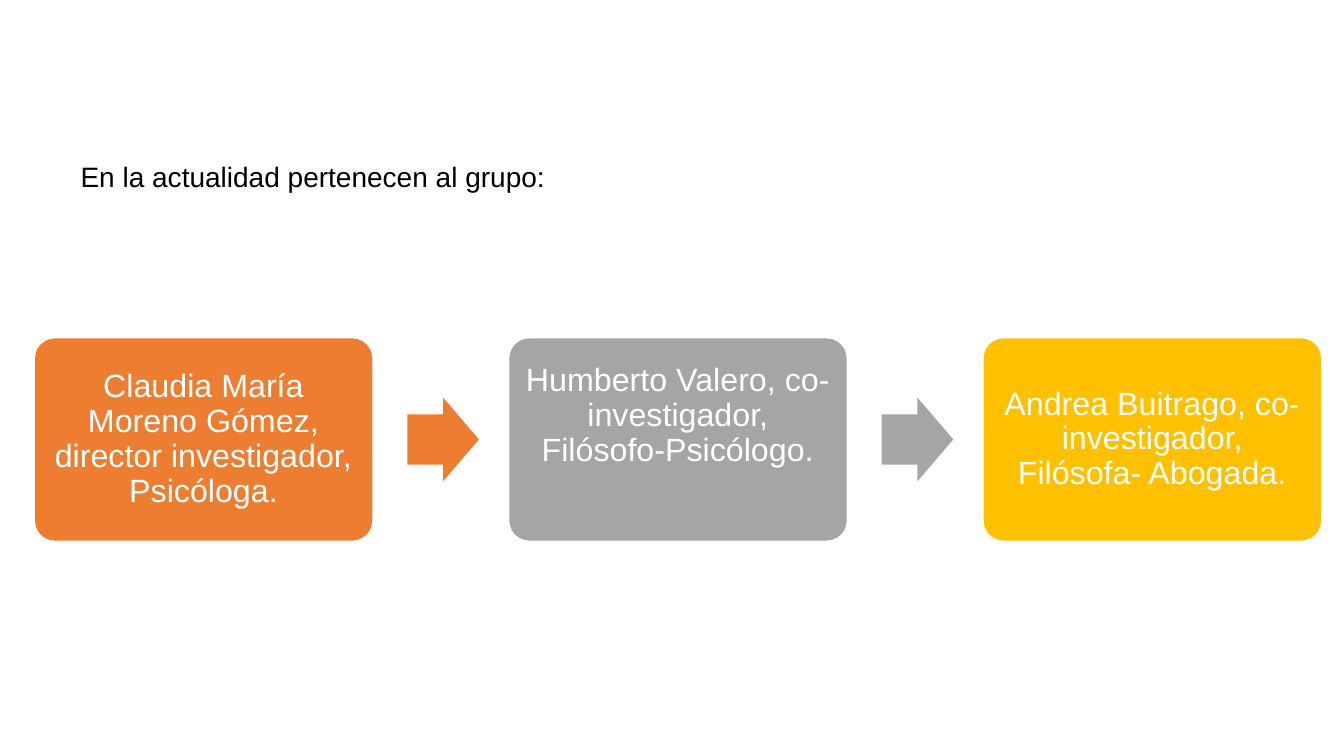
from pptx import Presentation
from pptx.dml.color import RGBColor
from pptx.enum.shapes import MSO_SHAPE
from pptx.enum.text import MSO_ANCHOR, PP_ALIGN
from pptx.util import Inches, Pt

ROUNDED = MSO_SHAPE.ROUNDED_RECTANGLE
ARROW = MSO_SHAPE.RIGHT_ARROW
MIDDLE = MSO_ANCHOR.MIDDLE
CENTER = PP_ALIGN.CENTER

BLACK = RGBColor(0x00, 0x00, 0x00)
WHITE = RGBColor(0xFF, 0xFF, 0xFF)
ORANGE = RGBColor(0xED, 0x7D, 0x31)
GRAY = RGBColor(0xA5, 0xA5, 0xA5)
GOLD = RGBColor(0xFF, 0xC0, 0x00)

FIRST_LEFT, COLUMN_STEP = 0.34, 4.705
CARD_WIDTH, CARD_HEIGHT = 3.36, 2.02
ARROW_WIDTH, ARROW_HEIGHT, ARROW_GAP = 0.71, 0.83, 0.34
ROW_MIDDLE = 4.36
MARGIN = 0.1

MEMBERS = [
    ("Claudia María Moreno Gómez, director investigador, Psicóloga.", ORANGE, MARGIN),
    ("Humberto Valero, co-investigador, Filósofo-Psicólogo.", GRAY, MARGIN + 0.46),
    ("Andrea Buitrago, co-investigador, Filósofa- Abogada.", GOLD, MARGIN),
]


def add_filled_shape(kind, left, width, height, color):
    shape = slide.shapes.add_shape(
        kind, Inches(left), Inches(ROW_MIDDLE - height / 2), Inches(width), Inches(height))
    shape.shadow.inherit = False
    shape.fill.solid()
    shape.fill.fore_color.rgb = color
    return shape


def format_text(paragraph, size, color):
    font = paragraph.runs[0].font
    font.name = "Arial"
    font.size = Pt(size)
    font.color.rgb = color


presentation = Presentation()
presentation.slide_width = Inches(13.33)
presentation.slide_height = Inches(7.5)
slide = presentation.slides.add_slide(presentation.slide_layouts[6])

heading = slide.shapes.add_textbox(Inches(0.7), Inches(1.53), Inches(11.92), Inches(0.74))
heading.text_frame.word_wrap = True
heading.text_frame.text = "En la actualidad pertenecen al grupo:"
format_text(heading.text_frame.paragraphs[0], 20, BLACK)

for column, (description, color, bottom_margin) in enumerate(MEMBERS):
    left = FIRST_LEFT + column * COLUMN_STEP
    card = add_filled_shape(ROUNDED, left, CARD_WIDTH, CARD_HEIGHT, color)
    card.adjustments[0] = 0.1
    card.line.color.rgb = WHITE
    card.line.width = Pt(1)

    frame = card.text_frame
    frame.word_wrap = True
    frame.vertical_anchor = MIDDLE
    frame.margin_left = frame.margin_right = frame.margin_top = Inches(MARGIN)
    frame.margin_bottom = Inches(bottom_margin)
    frame.text = description
    paragraph = frame.paragraphs[0]
    paragraph.alignment = CENTER
    paragraph.line_spacing = 0.9
    format_text(paragraph, 23, WHITE)

    if column < len(MEMBERS) - 1:
        arrow = add_filled_shape(
            ARROW, left + CARD_WIDTH + ARROW_GAP, ARROW_WIDTH, ARROW_HEIGHT, color)
        arrow.adjustments[0] = 0.6
        arrow.adjustments[1] = 0.5
        arrow.line.fill.background()

presentation.save("out.pptx")
